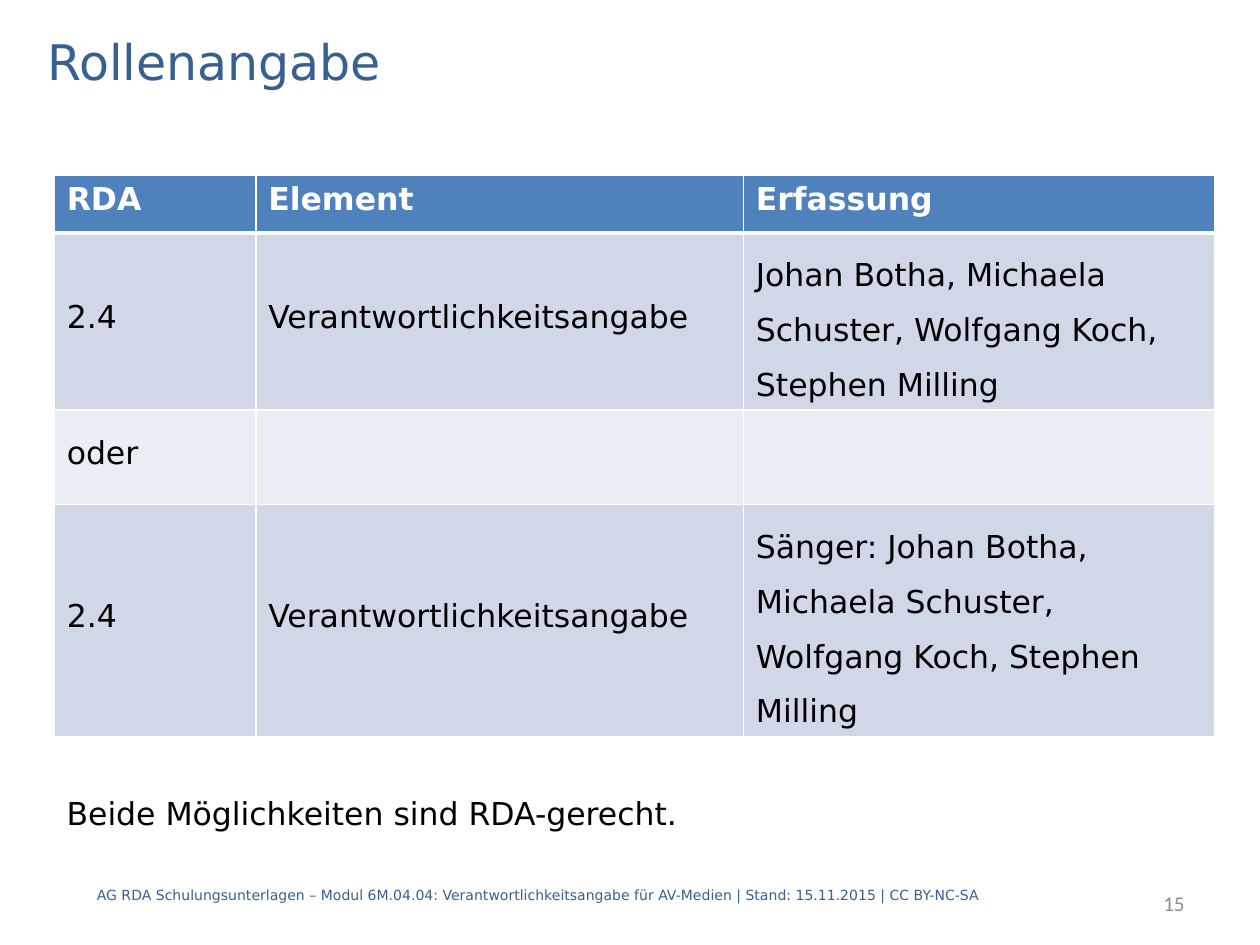
from lxml.etree import SubElement
from pptx import Presentation
from pptx.dml.color import RGBColor
from pptx.enum.text import MSO_ANCHOR, PP_ALIGN
from pptx.oxml.ns import qn
from pptx.util import Inches, Pt

WHITE = RGBColor(0xFF, 0xFF, 0xFF)
BLACK = RGBColor(0, 0, 0)
GREY = RGBColor(0x8C, 0x8C, 0x8C)
TITLE_BLUE = RGBColor(0x37, 0x60, 0x92)
HEADER_BLUE = RGBColor(0x4F, 0x81, 0xBD)
BANDS = [RGBColor(0xE9, 0xED, 0xF4), RGBColor(0xD0, 0xD8, 0xE8)]

FONT = "DejaVu Sans"
ROWS = [
    ["RDA", "Element", "Erfassung"],
    ["2.4", "Verantwortlichkeitsangabe",
     "Johan Botha, Michaela Schuster, Wolfgang Koch, Stephen Milling"],
    ["oder", "", ""],
    ["2.4", "Verantwortlichkeitsangabe",
     "Sänger: Johan Botha, Michaela Schuster, Wolfgang Koch, Stephen Milling"],
]
COLUMN_WIDTHS = [1.6, 3.87, 3.74]
ROW_HEIGHTS = [0.46, 1.4, 0.75, 1.84]
TABLE_POSITION = (0.43, 1.39)

TEXTS = [
    ("Rollenangabe", (0.28, 0.2, 9.45, 0.56),
     {"size": Pt(28), "name": FONT}, TITLE_BLUE, PP_ALIGN.LEFT),
    ("Beide Möglichkeiten sind RDA-gerecht.", (0.43, 6.17, 9.45, 0.56),
     {"size": Pt(18), "name": FONT}, BLACK, PP_ALIGN.LEFT),
    ("AG RDA Schulungsunterlagen – Modul 6M.04.04: Verantwortlichkeitsangabe für AV-Medien"
     " | Stand: 15.11.2015 | CC BY-NC-SA", (0.67, 6.9, 8.74, 0.4),
     {"size": Pt(8), "name": FONT}, TITLE_BLUE, PP_ALIGN.LEFT),
    ("15", (7.91, 6.97, 1.59, 0.4),
     {"size": Pt(12), "name": "Calibri"}, GREY, PP_ALIGN.RIGHT),
]


def set_values(target, values):
    for name, value in values.items():
        setattr(target, name, value)


def add_text(slide, text, position, font, color, alignment):
    shape = slide.shapes.add_textbox(*map(Inches, position))
    set_values(shape.text_frame, {"word_wrap": True, "vertical_anchor": MSO_ANCHOR.MIDDLE})
    paragraph = shape.text_frame.paragraphs[0]
    paragraph.alignment = alignment
    run = paragraph.add_run()
    run.text = text
    set_values(run.font, font)
    run.font.color.rgb = color


def add_borders(cell, widths):
    properties = cell._tc.get_or_add_tcPr()
    for side, width in widths.items():
        line = SubElement(properties, qn(f"a:ln{side}"), w=str(Pt(width)))
        fill = SubElement(line, qn("a:solidFill"))
        SubElement(fill, qn("a:srgbClr"), val=str(WHITE))


def format_cell(cell, text, row, column):
    header = row == 0
    add_borders(cell, {"L": 1, "R": 1, "T": 3 if row == 1 else 1, "B": 3 if header else 1})
    cell.fill.solid()
    cell.fill.fore_color.rgb = HEADER_BLUE if header else BANDS[row % 2]
    paragraph = cell.text_frame.paragraphs[0]
    if not header:
        cell.vertical_anchor = MSO_ANCHOR.MIDDLE
        set_values(paragraph, {
            "line_spacing": 1.5 if column == 2 else Pt(16),
            "space_before": Pt(6),
            "space_after": Pt(6),
        })
    if text:
        run = paragraph.add_run()
        run.text = text
        set_values(run.font, {"size": Pt(18), "name": FONT, "bold": header})
        run.font.color.rgb = WHITE if header else BLACK


def add_role_table(slide):
    size = (sum(COLUMN_WIDTHS), sum(ROW_HEIGHTS))
    table = slide.shapes.add_table(
        len(ROWS), len(COLUMN_WIDTHS), *map(Inches, TABLE_POSITION + size)).table
    for column, width in zip(table.columns, COLUMN_WIDTHS):
        column.width = Inches(width)
    for row, height in zip(table.rows, ROW_HEIGHTS):
        row.height = Inches(height)
    for row, texts in enumerate(ROWS):
        for column, text in enumerate(texts):
            format_cell(table.cell(row, column), text, row, column)


def main():
    presentation = Presentation()
    set_values(presentation, {"slide_width": Inches(10), "slide_height": Inches(7.5)})
    slide = presentation.slides.add_slide(presentation.slide_layouts[6])
    add_role_table(slide)
    for item in TEXTS:
        add_text(slide, *item)
    presentation.save("out.pptx")


if __name__ == "__main__":
    main()
